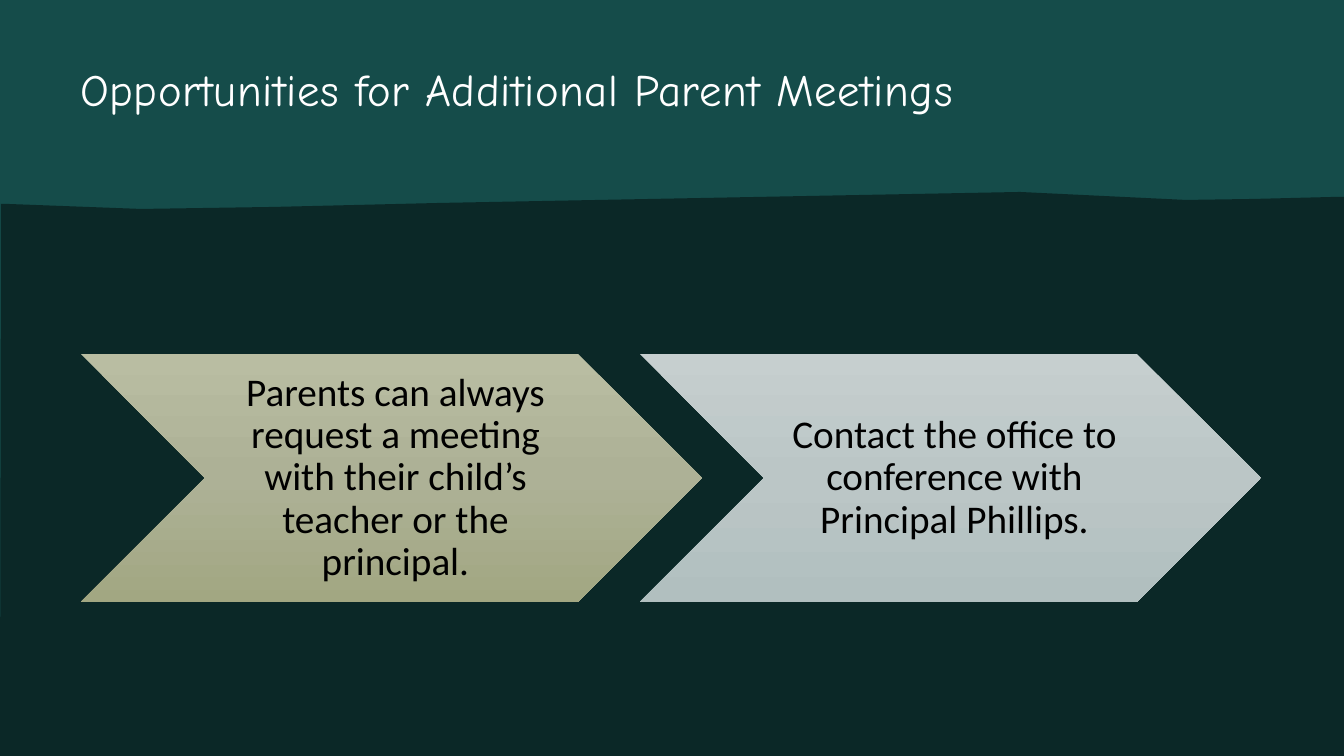
import copy

import pptx
import pptx.dml.color
import pptx.enum.shapes
import pptx.enum.text
import pptx.oxml.ns
import pptx.util

SLIDE_W, SLIDE_H = 1344, 756
SCALE = 12192000 / SLIDE_W

COLORS = {
    "band": "154C4A",
    "ground": "0B2827",
    "title": "FFFFFF",
    "text": "000000",
    "olive": ("B9BDA2", "ADB196", "A2A782"),
    "silver": ("C6CFCF", "BBC6C6", "B1BFBF"),
}
TORN_EDGE = [(1, 204), (8, 204), (141, 209), (274, 207), (357, 205), (439, 203),
             (1020, 192), (1186, 200), (1253, 199), (1334, 197)]
STEPS = [
    ("Parents can always request a meeting with their child’s teacher or the principal.", "olive"),
    ("Contact the office to conference with Principal Phillips.", "silver"),
]


def px(n):
    return pptx.util.Emu(round(n * SCALE))


def rgb(value):
    return pptx.dml.color.RGBColor.from_string(value)


def paint(sp, color):
    sp.shadow.inherit = False
    sp.fill.solid()
    sp.fill.fore_color.rgb = rgb(color)
    sp.line.fill.background()


def paint_gradient(sp, colors):
    """Fill from top to bottom with three evenly spaced colours."""
    sp.shadow.inherit = False
    sp.line.fill.background()
    sp.fill.gradient()
    sp.fill.gradient_angle = 270
    stops = sp._element.find(".//" + pptx.oxml.ns.qn("a:gsLst"))
    stops.append(copy.deepcopy(stops[0]))
    for i, (stop, color) in enumerate(zip(sp.fill.gradient_stops, colors)):
        stop.position = i / 2
        stop.color.rgb = rgb(color)


def set_margins(tf, left, top, right, bottom):
    tf.margin_left, tf.margin_top = px(left), px(top)
    tf.margin_right, tf.margin_bottom = px(right), px(bottom)


def add_text(tf, text, font, size, color, align, spacing):
    p = tf.paragraphs[0]
    p.alignment = align
    p.line_spacing = spacing
    r = p.add_run()
    r.text = text
    r.font.name = font
    r.font.size = pptx.util.Pt(size)
    r.font.color.rgb = rgb(color)
    return r


def add_backdrop(s, left, top, width, height):
    """Lay the teal band and the dark ground with its torn upper edge."""
    band = s.shapes.add_shape(pptx.enum.shapes.MSO_SHAPE.RECTANGLE,
                              px(left), px(top), px(width), px(height))
    paint(band, COLORS["band"])
    right, bottom = left + width, top + height
    edge = [(left + x, top + y) for x, y in TORN_EDGE]
    outline = edge + [(right, edge[-1][1]), (right, bottom), (left, bottom)]
    points = [(px(x), px(y)) for x, y in outline]
    builder = s.shapes.build_freeform(*points[0])
    builder.add_line_segments(points[1:], close=True)
    paint(builder.convert_to_shape(), COLORS["ground"])


def add_title(s, left, top, width, height):
    title = s.shapes.title
    s.shapes._spTree.append(title._element)
    title.left, title.top = px(left), px(top)
    title.width, title.height = px(width), px(height)
    tf = title.text_frame
    tf.word_wrap = True
    tf.auto_size = pptx.enum.text.MSO_AUTO_SIZE.NONE
    tf.vertical_anchor = pptx.enum.text.MSO_ANCHOR.TOP
    set_margins(tf, 0, 0, 0, 0)
    r = add_text(tf, "Opportunities for Additional Parent Meetings", "Comic Neue", 32,
                 COLORS["title"], pptx.enum.text.PP_ALIGN.LEFT, 0.88)
    r.font._element.set("spc", "40")


def add_chevrons(s, left, top, width, height):
    """Spread the steps over the box, each overlapping the next by a tenth."""
    step_w = width / (1 + 0.9 * (len(STEPS) - 1))
    for i, (text, tone) in enumerate(STEPS):
        sp = s.shapes.add_shape(pptx.enum.shapes.MSO_SHAPE.CHEVRON,
                                px(left + i * 0.9 * step_w), px(top), px(step_w), px(height))
        paint_gradient(sp, COLORS[tone])
        tf = sp.text_frame
        tf.word_wrap = True
        tf.vertical_anchor = pptx.enum.text.MSO_ANCHOR.MIDDLE
        set_margins(tf, 12, 4, 4, 4)
        add_text(tf, text, "Calibri", 28, COLORS["text"],
                 pptx.enum.text.PP_ALIGN.CENTER, 0.9)


def main():
    prs = pptx.Presentation()
    prs.slide_width, prs.slide_height = px(SLIDE_W), px(SLIDE_H)
    s = prs.slides.add_slide(prs.slide_layouts[5])
    s.background.fill.solid()
    s.background.fill.fore_color.rgb = rgb(COLORS["ground"])
    add_backdrop(s, 0, 0, SLIDE_W, SLIDE_H)
    add_title(s, 80, 69, 1182, 76)
    add_chevrons(s, 81, 354, 1180, 248)
    prs.save("out.pptx")


if __name__ == "__main__":
    main()
